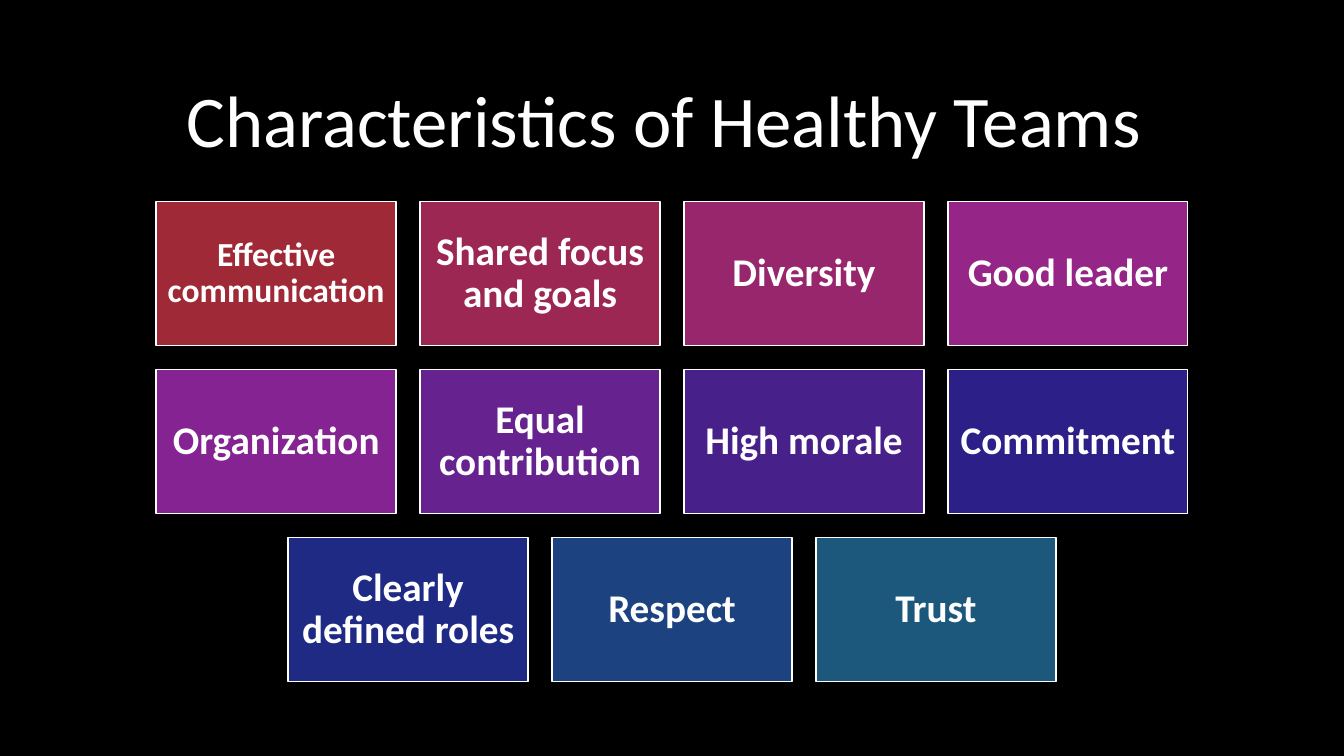
from dataclasses import dataclass

from pptx import Presentation
from pptx.dml.color import RGBColor
from pptx.enum.shapes import MSO_SHAPE
from pptx.enum.text import MSO_ANCHOR, MSO_AUTO_SIZE, PP_ALIGN
from pptx.slide import Slide
from pptx.text.text import TextFrame
from pptx.util import Pt

RECTANGLE = MSO_SHAPE.RECTANGLE
MIDDLE = MSO_ANCHOR.MIDDLE
NO_AUTOFIT = MSO_AUTO_SIZE.NONE
CENTER = PP_ALIGN.CENTER
TITLE_ONLY = 5


@dataclass(frozen=True)
class Theme:
    font: str = "Calibri"
    background: str = "000000"
    foreground: str = "FFFFFF"
    title_size: float = 52
    card_size: float = 28
    long_word_size: float = 24
    line_spacing: float = 0.9


@dataclass(frozen=True)
class Card:
    text: str
    fill: str
    size: float


THEME = Theme()

# Page and grid measures, in points
PAGE_WIDTH, PAGE_HEIGHT = 960, 540
CARD_WIDTH, CARD_HEIGHT = 171.4, 102.9
GAP = 17.1
GRID_TOP = 144
INSET_RATIO = 0.3

CARD_ROWS = [
    [
        Card("Effective communication", "9F2936", THEME.long_word_size),
        Card("Shared focus and goals", "9C2752", THEME.card_size),
        Card("Diversity", "98266C", THEME.card_size),
        Card("Good leader", "952586", THEME.card_size),
    ],
    [
        Card("Organization", "842391", THEME.card_size),
        Card("Equal contribution", "66228E", THEME.card_size),
        Card("High morale", "48208A", THEME.card_size),
        Card("Commitment ", "2C1F87", THEME.card_size),
    ],
    [
        Card("Clearly defined roles", "1E2A83", THEME.card_size),
        Card("Respect", "1C4280", THEME.card_size),
        Card("Trust", "1B587C", THEME.card_size),
    ],
]


def apply_format(target: object, values: dict[str, object]) -> None:
    for name, value in values.items():
        setattr(target, name, value)


def write_text(frame: TextFrame, text: str, size: float, bold: bool) -> None:
    apply_format(frame, {
        "word_wrap": True,
        "auto_size": NO_AUTOFIT,
        "vertical_anchor": MIDDLE,
    })
    para = frame.paragraphs[0]
    apply_format(para, {"alignment": CENTER, "line_spacing": THEME.line_spacing})
    span = para.add_run()
    span.text = text
    apply_format(span.font, {"name": THEME.font, "size": Pt(size), "bold": bold})
    span.font.color.rgb = RGBColor.from_string(THEME.foreground)


def draw_title(page: Slide, text: str) -> None:
    title = page.shapes.title
    apply_format(title, {
        "left": Pt(66),
        "top": Pt(44),
        "width": Pt(828),
        "height": Pt(89),
    })
    write_text(title.text_frame, text, THEME.title_size, False)


def draw_card(page: Slide, card: Card, left: float, top: float) -> None:
    box = page.shapes.add_shape(
        RECTANGLE, Pt(left), Pt(top), Pt(CARD_WIDTH), Pt(CARD_HEIGHT)
    )
    box.shadow.inherit = False
    box.fill.solid()
    box.fill.fore_color.rgb = RGBColor.from_string(card.fill)
    box.line.color.rgb = RGBColor.from_string(THEME.foreground)
    box.line.width = Pt(1)
    inset = Pt(card.size * INSET_RATIO)
    sides = ("left", "top", "right", "bottom")
    apply_format(box.text_frame, {f"margin_{side}": inset for side in sides})
    write_text(box.text_frame, card.text, card.size, True)


def draw_grid(page: Slide, rows: list[list[Card]]) -> None:
    for row_index, row in enumerate(rows):
        # Each row is centred on the page
        row_width = len(row) * (CARD_WIDTH + GAP) - GAP
        row_left = (PAGE_WIDTH - row_width) / 2
        top = GRID_TOP + row_index * (CARD_HEIGHT + GAP)
        for column, card in enumerate(row):
            draw_card(page, card, row_left + column * (CARD_WIDTH + GAP), top)


def main() -> None:
    deck = Presentation()
    apply_format(deck, {
        "slide_width": Pt(PAGE_WIDTH),
        "slide_height": Pt(PAGE_HEIGHT),
    })
    page = deck.slides.add_slide(deck.slide_layouts[TITLE_ONLY])

    # Background
    page.background.fill.solid()
    page.background.fill.fore_color.rgb = RGBColor.from_string(THEME.background)

    # Title and cards
    draw_title(page, "Characteristics of Healthy Teams ")
    draw_grid(page, CARD_ROWS)
    deck.save("out.pptx")


if __name__ == "__main__":
    main()
